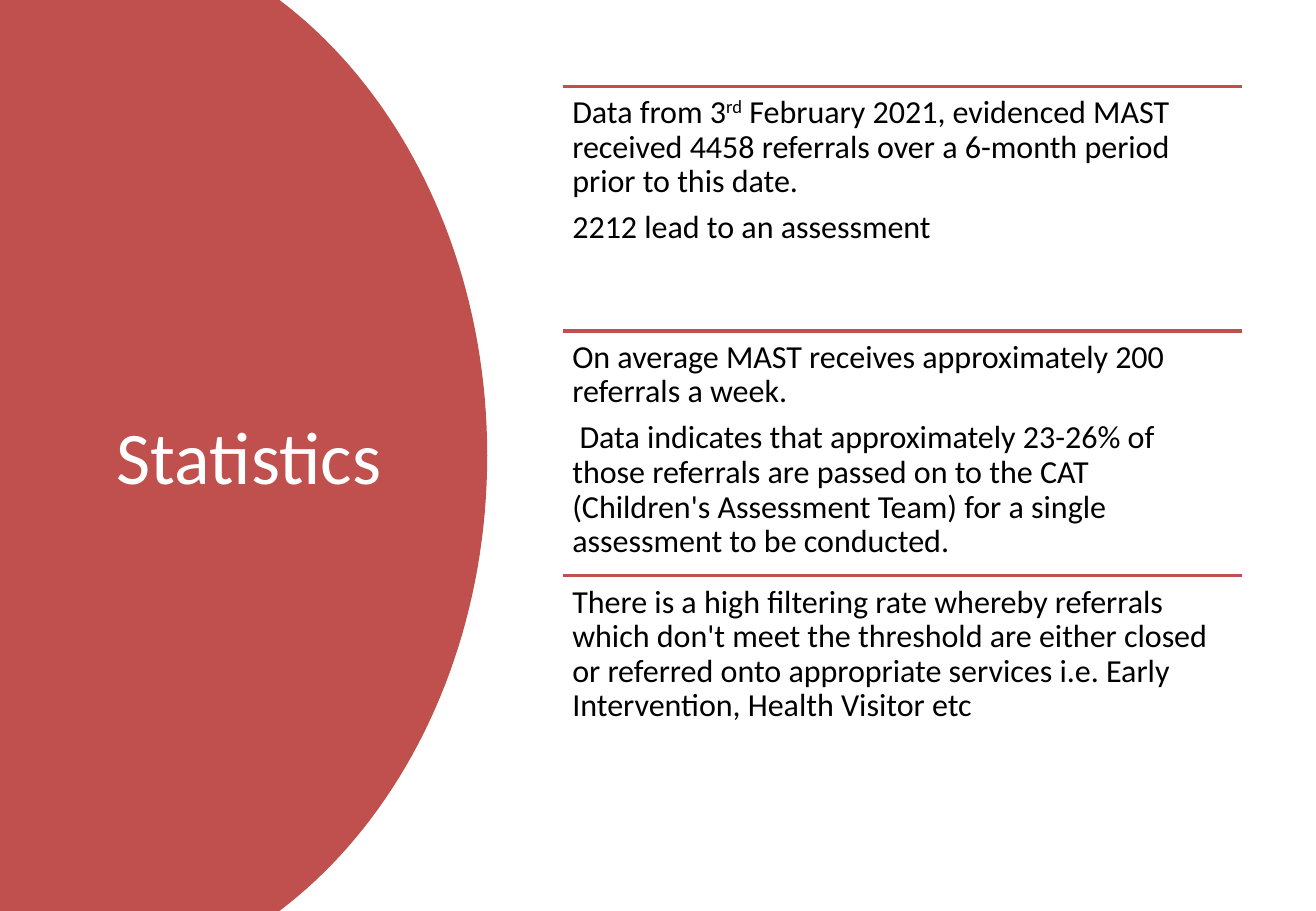
from lxml import etree
from pptx import Presentation, util as u
from pptx.dml.color import RGBColor
from pptx.enum import shapes, text
from pptx.oxml.ns import qn

RED, WHITE, BLACK = "C0504D", "FFFFFF", "000000"


def rgb(code):
    return RGBColor.from_string(code)


def style(run, size, color):
    run.font.name = "Calibri"
    run.font.size = u.Pt(size)
    run.font.color.rgb = rgb(color)


deck = Presentation()
deck.slide_width, deck.slide_height = u.Inches(10.83), u.Inches(7.5)
slide = deck.slides.add_slide(deck.slide_layouts[5])

# Red panel with a curved right edge: two mirrored cubic curves
curve = [(2.3, 0), (3.32, 0.77), (4.01, 2.16), (4.01, 3.75)]
steps = 40
upper = []
for i in range(steps + 1):
    t = i / steps
    parts = ((1 - t) ** 3, 3 * t * (1 - t) ** 2, 3 * t ** 2 * (1 - t), t ** 3)
    upper.append([sum(w * p[k] for w, p in zip(parts, curve)) for k in (0, 1)])
lower = [(x, 7.5 - y) for x, y in reversed(upper[:-1])]
edge = [(u.Inches(x), u.Inches(y)) for x, y in upper + lower + [(0, 7.5)]]
pen = slide.shapes.build_freeform(0, 0)
pen.add_line_segments(edge, close=True)
panel = pen.convert_to_shape()
panel.shadow.inherit = False
panel.fill.solid()
panel.fill.fore_color.rgb = rgb(RED)
panel.line.fill.background()

# Title, in front of the panel
title = slide.shapes.title
title.left, title.top = u.Inches(0.74), u.Inches(0.7)
title.width, title.height = u.Inches(2.62), u.Inches(6.09)
title.text_frame.text = "Statistics"
title.text_frame.vertical_anchor = text.MSO_ANCHOR.MIDDLE
head = title.text_frame.paragraphs[0]
head.alignment = text.PP_ALIGN.CENTER
style(head.runs[0], 44, WHITE)
title._element.addprevious(panel._element)

# Facts: each paragraph is a list of runs, "rd" being raised
facts = [
    [["Data from 3", "rd", " February 2021, evidenced MAST received 4458 "
      "referrals over a 6-month period prior to this date."],
     ["2212 lead to an assessment"]],
    [["On average MAST receives approximately 200 referrals a week."],
     [" Data indicates that approximately 23-26% of those referrals are "
      "passed on to the CAT (Children's Assessment Team) for a single "
      "assessment to be conducted."]],
    [["There is a high filtering rate whereby referrals which don't meet the "
      "threshold are either closed or referred onto appropriate services "
      "i.e. Early Intervention, Health Visitor etc"]],
]
left, top, width, pitch = 4.63, 0.71, 5.59, 2.015
for row, fact in enumerate(facts):
    y = u.Inches(top + row * pitch)

    # Rule above the fact
    rule = slide.shapes.add_connector(
        shapes.MSO_CONNECTOR.STRAIGHT,
        u.Inches(left), y, u.Inches(left + width), y)
    rule.line.color.rgb = rgb(RED)
    rule.line.width = u.Pt(2)
    etree.SubElement(rule._element.spPr, qn("a:effectLst"))

    # Text of the fact
    box = slide.shapes.add_textbox(
        u.Inches(left), y, u.Inches(width), u.Inches(pitch))
    frame = box.text_frame
    frame.word_wrap = True
    frame.margin_left = frame.margin_right = u.Inches(0.08)
    frame.margin_top = frame.margin_bottom = u.Inches(0.08)
    for n, words in enumerate(fact):
        para = frame.add_paragraph() if n else frame.paragraphs[0]
        para.line_spacing = 0.9
        para.space_after = u.Pt(6.65)
        for word in words:
            run = para.add_run()
            run.text = word
            style(run, 19, BLACK)
            if word == "rd":
                run._r.get_or_add_rPr().set("baseline", "30000")

deck.save("out.pptx")
